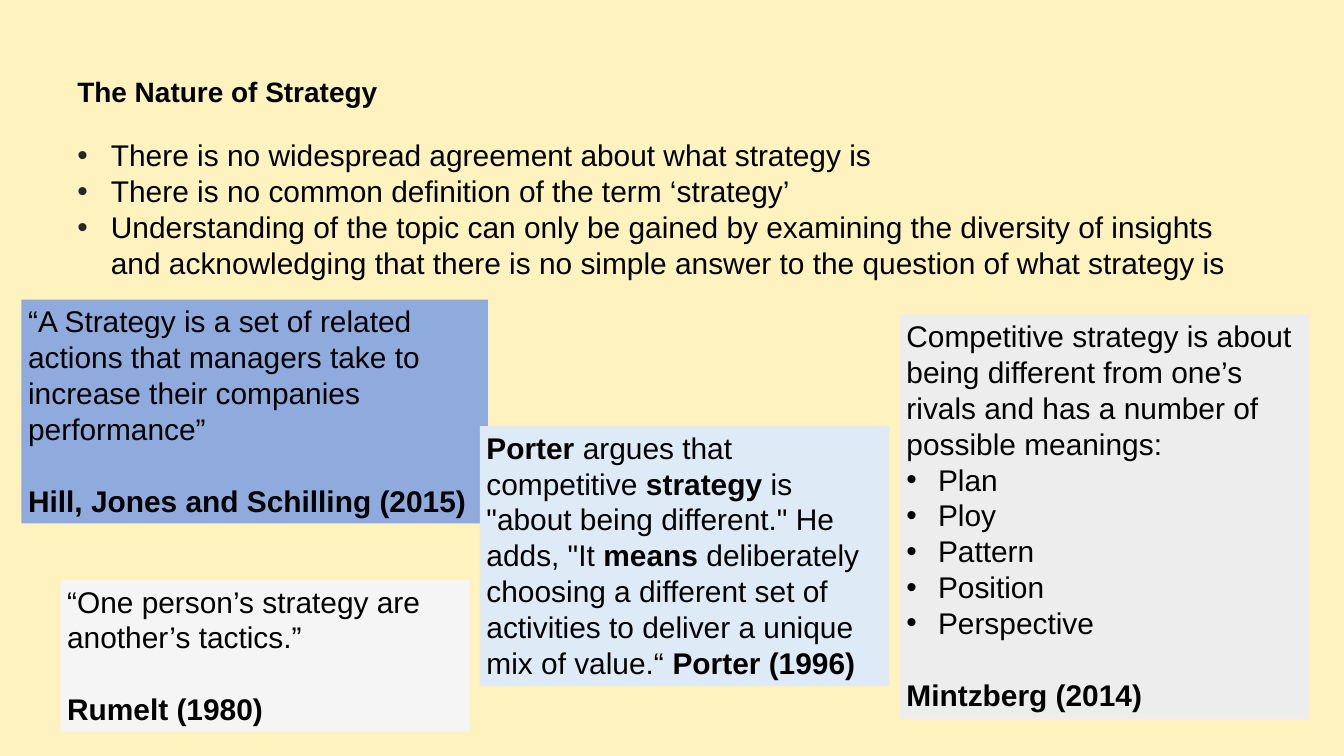
from lxml import etree
from pptx import Presentation
from pptx.dml.color import RGBColor
from pptx.enum.shapes import MSO_SHAPE
from pptx.enum.text import MSO_ANCHOR, MSO_AUTO_SIZE, PP_ALIGN
from pptx.oxml.ns import qn
from pptx.util import Inches, Pt

RECT = MSO_SHAPE.RECTANGLE
TOP, BOTTOM = MSO_ANCHOR.TOP, MSO_ANCHOR.BOTTOM
LEFT = PP_ALIGN.LEFT
FIXED, GROW = MSO_AUTO_SIZE.NONE, MSO_AUTO_SIZE.SHAPE_TO_FIT_TEXT

CREAM = RGBColor(0xFE, 0xF2, 0xBE)
BLACK = RGBColor(0x00, 0x00, 0x00)
CHARCOAL = RGBColor(0x27, 0x27, 0x27)
BLUE = RGBColor(0x8F, 0xAA, 0xDC)
PALE_BLUE = RGBColor(0xDE, 0xEB, 0xF7)
GREY = RGBColor(0xED, 0xED, 0xED)
PALE_GREY = RGBColor(0xF5, 0xF5, 0xF5)

BLANK_LINE = 38.4


def add_bullet(p, indent, color):
    pPr = p._p.get_or_add_pPr()
    pPr.set("marL", str(Inches(indent)))
    pPr.set("indent", str(-Inches(indent)))
    clr = etree.SubElement(pPr, qn("a:buClr"))
    etree.SubElement(clr, qn("a:srgbClr")).set("val", str(color))
    etree.SubElement(pPr, qn("a:buFont")).set("typeface", "Arial")
    etree.SubElement(pPr, qn("a:buChar")).set("char", "•")


def write(tf, text, size=32, bold=False, before=0, spacing=1.0,
          indent=None, bullet_color=BLACK, first=False):
    p = tf.paragraphs[0] if first else tf.add_paragraph()
    if indent:
        add_bullet(p, indent, bullet_color)
    p.alignment = LEFT
    p.line_spacing = spacing
    p.space_before = Pt(before)
    p.space_after = Pt(0)
    runs = [(text, bold)] if isinstance(text, str) else text
    for part, is_bold in runs:
        r = p.add_run()
        r.text = part
        r.font.name = "Arial"
        r.font.size = Pt(size)
        r.font.bold = is_bold
        r.font.color.rgb = BLACK


class Deck:
    def __init__(self):
        self.prs = Presentation()
        self.prs.slide_width = Inches(20)
        self.prs.slide_height = Inches(11.25)
        self.s = self.prs.slides.add_slide(self.prs.slide_layouts[0])
        self.s.background.fill.solid()
        self.s.background.fill.fore_color.rgb = CREAM

    def place(self, sp, x, y, w, h, anchor):
        sp.left, sp.top = Inches(x), Inches(y)
        sp.width, sp.height = Inches(w), Inches(h)
        tf = sp.text_frame
        tf.word_wrap = True
        tf.auto_size = FIXED
        tf.vertical_anchor = anchor
        return tf

    def title(self, text, x, y, w, h):
        tf = self.place(self.s.shapes.title, x, y, w, h, BOTTOM)
        write(tf, text, size=30, bold=True, spacing=0.9, first=True)

    def bullets(self, items, x, y, w, h):
        tf = self.place(self.s.placeholders[1], x, y, w, h, TOP)
        for i, item in enumerate(items):
            write(tf, item, indent=0.5, bullet_color=CHARCOAL, first=i == 0)

    def quote(self, text, x, y, w, h, fill, items=(), author=None):
        sp = self.s.shapes.add_shape(RECT, Inches(x), Inches(y), Inches(w), Inches(h))
        sp.shadow.inherit = False
        sp.fill.solid()
        sp.fill.fore_color.rgb = fill
        sp.line.fill.background()
        tf = self.place(sp, x, y, w, h, TOP)
        tf.auto_size = GROW
        write(tf, text, first=True)
        for item in items:
            write(tf, item, indent=0.47)
        if author:
            write(tf, author, bold=True, before=BLANK_LINE)


def main():
    deck = Deck()
    deck.title("The Nature of Strategy", 1.05, 1.04, 17.84, 0.62)
    deck.bullets([
        "There is no widespread agreement about what strategy is",
        "There is no common definition of the term ‘strategy’",
        "Understanding of the topic can only be gained by examining the diversity "
        "of insights and acknowledging that there is no simple answer to the "
        "question of what strategy is",
    ], 1.05, 1.99, 17.84, 7.12)
    deck.quote("“A Strategy is a set of related actions that managers take to "
               "increase their companies performance”",
               0.32, 4.46, 6.94, 3.33, BLUE,
               author="Hill, Jones and Schilling (2015)")
    deck.quote("Competitive strategy is about being different from one’s rivals "
               "and has a number of possible meanings:",
               13.39, 4.68, 6.09, 6.02, GREY,
               items=["Plan", "Ploy", "Pattern", "Position", "Perspective"],
               author="Mintzberg (2014)")
    deck.quote("“One person’s strategy are another’s tactics.”",
               0.9, 8.63, 6.09, 2.26, PALE_GREY, author="Rumelt (1980)")
    deck.quote([
        ("Porter", True),
        (" argues that competitive ", False),
        ("strategy", True),
        (" is \"about being different.\" He adds, \"It ", False),
        ("means", True),
        (" deliberately choosing a different set of activities to deliver a "
         "unique mix of value.“ ", False),
        ("Porter (1996)", True),
    ], 7.14, 6.34, 6.09, 3.87, PALE_BLUE)
    deck.prs.save("out.pptx")


if __name__ == "__main__":
    main()
